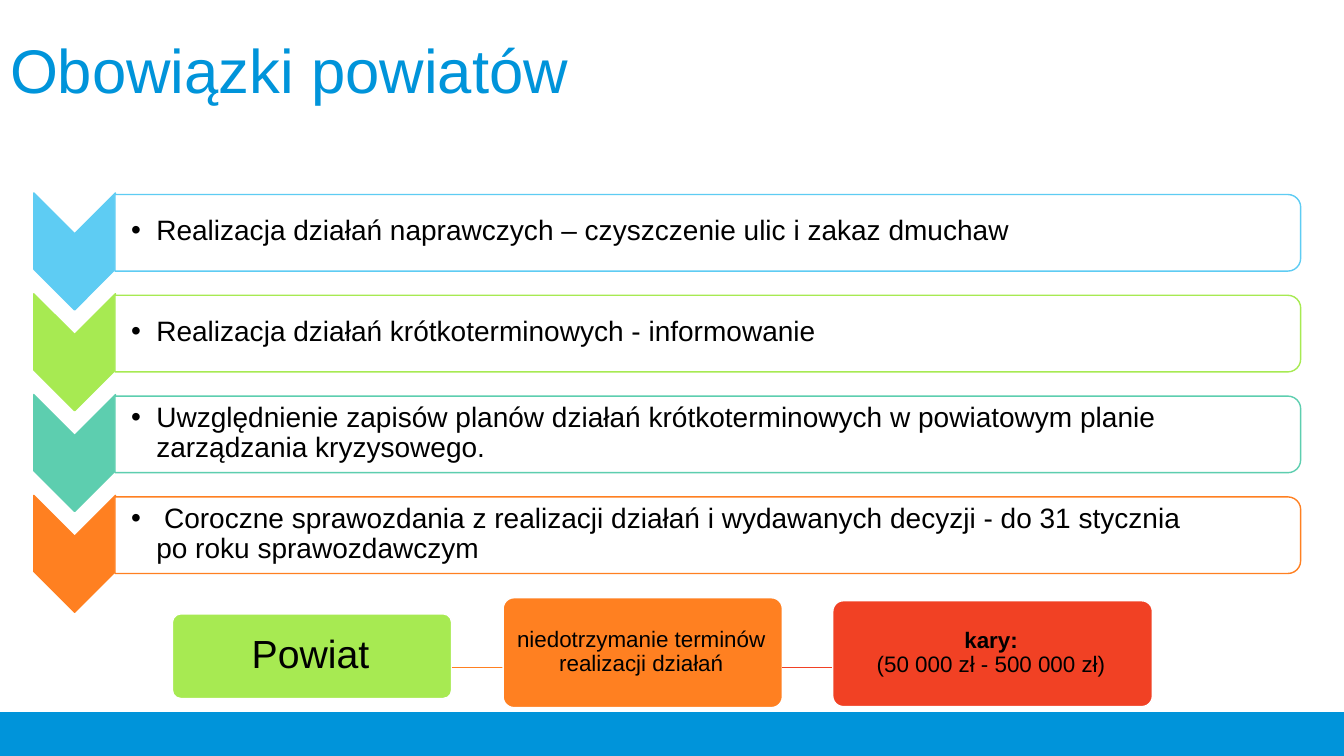
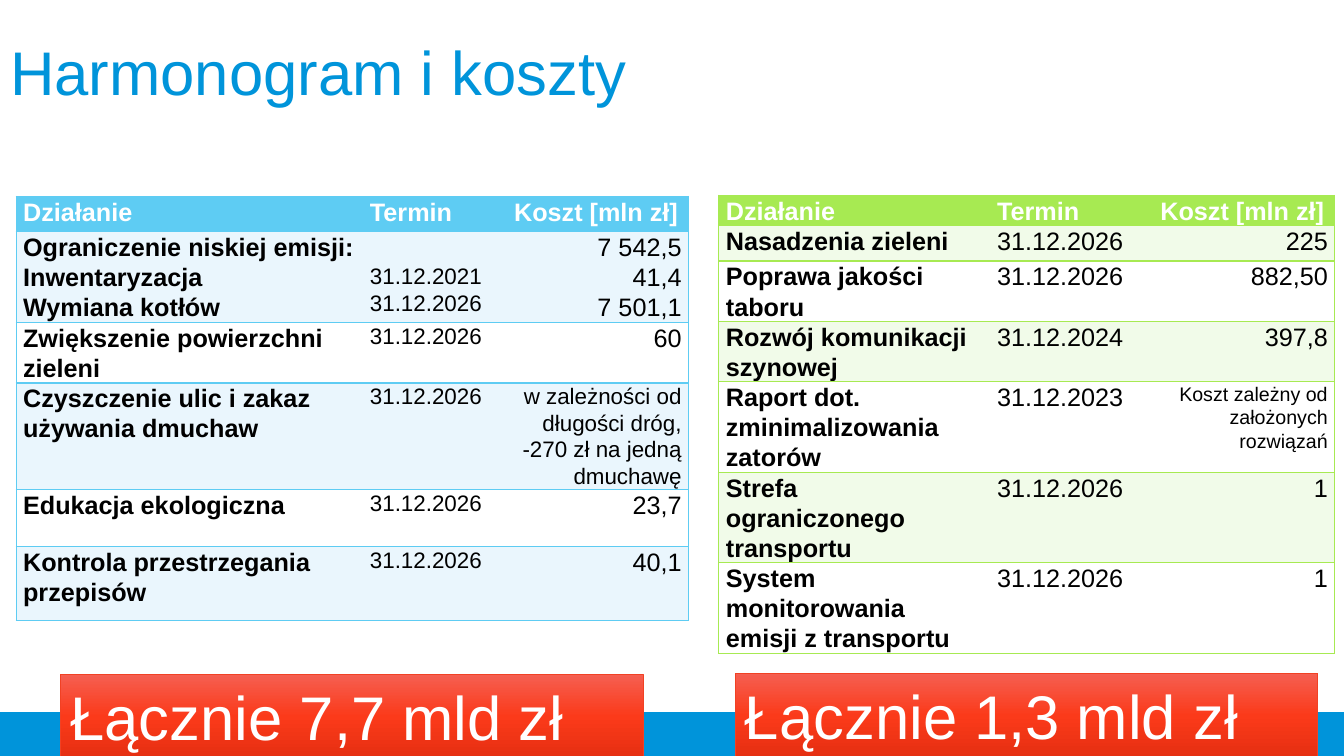
import copy

import pptx
import pptx.dml.color
import pptx.enum.shapes
import pptx.enum.text
import pptx.oxml.ns
import pptx.oxml.xmlchemy
import pptx.util
from lxml import etree

Inches = pptx.util.Inches
Pt = pptx.util.Pt
qn = pptx.oxml.ns.qn
SHAPE = pptx.enum.shapes.MSO_SHAPE
ALIGN = pptx.enum.text.PP_ALIGN
ANCHOR = pptx.enum.text.MSO_ANCHOR

FONT = "Arial"
BLUE, SKY, LIME, TEAL = "0094DA", "5ECCF3", "A7EA52", "5DCEAF"
ORANGE, RED, WHITE, BLACK = "FF8021", "F14124", "FFFFFF", "000000"
TOTAL_GRADIENT = [(0, "F55F51"), (0.5, "FB3A1A"), (1, "E52F11")]

DUTIES = [
    (SKY, "Realizacja działań naprawczych – czyszczenie ulic i zakaz dmuchaw"),
    (LIME, "Realizacja działań krótkoterminowych - informowanie"),
    (TEAL, "Uwzględnienie zapisów planów działań krótkoterminowych w powiatowym "
           "planie zarządzania kryzysowego."),
    (ORANGE, " Coroczne sprawozdania z realizacji działań i wydawanych decyzji "
             "- do 31 stycznia \npo roku sprawozdawczym"),
]

# left, top, width, height (inside the chain), colour, text, size
PENALTY_STEPS = [
    (0, 0.16, 2.77, 0.84, LIME, "Powiat", 28),
    (3.28, 0, 2.77, 1.09, ORANGE, "niedotrzymanie terminów realizacji działań", 16),
    (6.55, 0.03, 3.17, 1.05, RED, "kary:\n(50 000 zł - 500 000 zł)", 16),
]

HEADINGS = ("Działanie", "Termin", "Koszt [mln zł]")
CITY_ROWS = [
    ("Ograniczenie niskiej emisji:\nInwentaryzacja\nWymiana kotłów",
     "31.12.2021\n31.12.2026", "7 542,5\n41,4\n7 501,1"),
    ("Zwiększenie powierzchni zieleni", "31.12.2026", "60"),
    ("Czyszczenie ulic i zakaz używania dmuchaw", "31.12.2026",
     "w zależności od długości dróg,\n-270 zł na jedną dmuchawę"),
    ("Edukacja ekologiczna", "31.12.2026", "23,7"),
    ("Kontrola przestrzegania przepisów", "31.12.2026", "40,1"),
]
TRANSPORT_ROWS = [
    ("Nasadzenia zieleni", "31.12.2026", "225"),
    ("Poprawa jakości taboru", "31.12.2026", "882,50"),
    ("Rozwój komunikacji szynowej", "31.12.2024", "397,8"),
    ("Raport dot. zminimalizowania zatorów", "31.12.2023",
     "Koszt zależny od założonych rozwiązań"),
    ("Strefa ograniczonego transportu", "31.12.2026", "1"),
    ("System monitorowania emisji z transportu", "31.12.2026", "1"),
]


def rgb(color):
    return pptx.dml.color.RGBColor.from_string(color)


def box(left, top, width, height):
    return [Inches(round(length, 2)) for length in (left, top, width, height)]


def style(paragraph, size, color=BLACK, bold=False, align=ALIGN.LEFT, spacing=0.9):
    paragraph.alignment = align
    paragraph.line_spacing = spacing
    for run in paragraph.runs:
        run.font.name = FONT
        run.font.size = Pt(size)
        run.font.bold = bold
        run.font.color.rgb = rgb(color)


def set_margins(target, left, top, right, bottom):
    target.margin_left, target.margin_top = Inches(left), Inches(top)
    target.margin_right, target.margin_bottom = Inches(right), Inches(bottom)


def add_shape(slide, kind, bounds, fill, line, line_width=1):
    shape = slide.shapes.add_shape(kind, *box(*bounds))
    shape.shadow.inherit = False
    if fill:
        shape.fill.solid()
        shape.fill.fore_color.rgb = rgb(fill)
    shape.line.color.rgb = rgb(line)
    shape.line.width = Pt(line_width)
    return shape


def add_turned_shape(slide, kind, bounds, fill, line):
    """Add a shape turned a quarter right that covers the given bounds."""
    left, top, width, height = bounds
    unturned = (left + (width - height) / 2, top + (height - width) / 2, height, width)
    shape = add_shape(slide, kind, unturned, fill, line)
    shape.rotation = 90


def add_band_to_layout(prs, layout):
    """Draw the bottom band once, at the back of the shared layout."""
    slide = prs.slides[0]
    band = add_shape(slide, SHAPE.RECTANGLE, (0, 7.07, 13.33, 0.43), BLUE, BLUE)
    band.element.nvSpPr.cNvPr.id = 100
    layout.shapes.element.insert(2, band.element)


def add_title(slide, text, bounds):
    title = slide.shapes.title
    title.left, title.top, title.width, title.height = box(*bounds)
    frame = title.text_frame
    frame.text = text
    frame.word_wrap = True
    frame.auto_size = pptx.enum.text.MSO_AUTO_SIZE.NONE
    frame.vertical_anchor = ANCHOR.MIDDLE
    style(frame.paragraphs[0], 44, BLUE)


def add_duty(slide, left, top, width, color, text):
    arrow_width, panel_height = 0.81, 0.76
    panel_left, panel_width = left + arrow_width, width - arrow_width
    add_turned_shape(slide, SHAPE.CHEVRON, (left, top, arrow_width, 1.16), color, color)
    add_turned_shape(slide, SHAPE.ROUND_2_SAME_RECTANGLE,
                     (panel_left, top + 0.01, panel_width, panel_height), WHITE, color)
    duty = slide.shapes.add_textbox(
        *box(panel_left, top + 0.04, panel_width - 0.04, panel_height - 0.08))
    frame = duty.text_frame
    frame.word_wrap = True
    frame.vertical_anchor = ANCHOR.MIDDLE
    set_margins(frame, 0.16, 0.01, 0.01, 0.01)
    paragraph = frame.paragraphs[0]
    paragraph.text = text
    properties = paragraph._p.get_or_add_pPr()
    properties.set("marL", str(Inches(0.25)))
    properties.set("indent", str(-Inches(0.25)))
    etree.SubElement(properties, qn("a:buFont")).set("typeface", FONT)
    etree.SubElement(properties, qn("a:buChar")).set("char", "•")
    style(paragraph, 20)


def add_duty_list(slide, left, top, width, pitch):
    for index, (color, text) in enumerate(DUTIES):
        add_duty(slide, left, top + index * pitch, width, color, text)


def add_penalty_chain(slide, left, top):
    link_y = top + 0.69
    previous_right = None
    for dx, dy, width, height, color, text, size in PENALTY_STEPS:
        step_left = left + dx
        if previous_right is not None:
            link = slide.shapes.add_connector(
                pptx.enum.shapes.MSO_CONNECTOR.STRAIGHT,
                Inches(previous_right), Inches(link_y), Inches(step_left), Inches(link_y))
            link.line.color.rgb = rgb(color)
            link.line.width = Pt(1)
            etree.SubElement(link._element.spPr, qn("a:effectLst"))
        step = add_shape(slide, SHAPE.ROUNDED_RECTANGLE,
                         (step_left, top + dy, width, height), color, WHITE)
        step.adjustments[0] = 0.1
        frame = step.text_frame
        frame.word_wrap = True
        frame.vertical_anchor = ANCHOR.MIDDLE
        set_margins(frame, 0.02, 0.02, 0.05, 0.02)
        paragraph = frame.paragraphs[0]
        paragraph.text = text
        style(paragraph, size, align=ALIGN.CENTER)
        if len(paragraph.runs) > 1:
            paragraph.runs[0].font.bold = True
        previous_right = step_left + width


def set_borders(cell, sides, color):
    """Draw the named sides (out of L, R, T, B) and clear the others."""
    properties = cell._tc.get_or_add_tcPr()
    for side in "LRTB":
        line = etree.SubElement(properties, qn(f"a:ln{side}"))
        line.set("w", str(Pt(1)))
        if side in sides:
            fill = etree.SubElement(line, qn("a:solidFill"))
            etree.SubElement(fill, qn("a:srgbClr")).set("val", color)
        else:
            etree.SubElement(line, qn("a:noFill"))


def add_cost_table(slide, left, top, widths, heights, rows, color, tint, date_size, note_size):
    grid = [HEADINGS] + rows
    table = slide.shapes.add_table(
        len(grid), len(HEADINGS), *box(left, top, sum(widths), sum(heights))).table
    table.horz_banding = False
    for column, width in zip(table.columns, widths):
        column.width = Inches(width)
    for row, height in zip(table.rows, heights):
        row.height = Inches(height)
    for r, texts in enumerate(grid):
        for c, text in enumerate(texts):
            cell = table.cell(r, c)
            set_borders(cell, ("LTB", "TB", "RTB")[c], color)
            cell.fill.solid()
            cell.fill.fore_color.rgb = rgb(color if r == 0 else tint if r % 2 else WHITE)
            set_margins(cell, 0.07, 0, 0.07, 0)
            cell.text_frame.text = text
            is_note = c == 2 and any(word.isalpha() for word in text.split())
            size = 18
            if r and c == 1:
                size = date_size
            elif r and is_note:
                size = note_size
            for paragraph in cell.text_frame.paragraphs:
                style(paragraph, size, BLACK if r else WHITE, bold=r == 0 or c == 0,
                      align=ALIGN.RIGHT if r and c == 2 else ALIGN.LEFT, spacing=1.07)
    return table


def add_total(slide, left, top, text):
    total = add_shape(slide, SHAPE.RECTANGLE, (left, top, 5.78, 0.84), None, RED, 0.5)
    total.fill.gradient()
    total.fill.gradient_angle = 270
    stop_list = total._element.spPr.find(qn("a:gradFill")).find(qn("a:gsLst"))
    stop_list.append(copy.deepcopy(stop_list[0]))
    for stop, (position, color) in zip(total.fill.gradient_stops, TOTAL_GRADIENT):
        stop.position = position
        stop.color.rgb = rgb(color)
    frame = total.text_frame
    frame.word_wrap = True
    frame.vertical_anchor = ANCHOR.TOP
    frame.text = text
    style(frame.paragraphs[0], 44, WHITE, spacing=1.0)


def build_duties_slide(slide):
    add_title(slide, "Obowiązki powiatów", (0, 0, 10.23, 1.45))
    add_duty_list(slide, 0.33, 1.92, 12.57, 1)
    add_penalty_chain(slide, 1.71, 5.93)


def build_costs_slide(slide):
    add_title(slide, "Harmonogram i koszty", (0, 0.33, 10.02, 0.84))
    add_cost_table(slide, 7.13, 1.94, (2.69, 1.62, 1.8),
                   (0.28, 0.35, 0.58, 0.58, 0.88, 0.88, 0.87),
                   TRANSPORT_ROWS, LIME, "F1FBE9", 18, 14)
    city = add_cost_table(slide, 0.16, 1.95, (3.44, 1.43, 1.8),
                          (0.35, 0.9, 0.57, 1, 0.57, 0.73),
                          CITY_ROWS, SKY, "EAF6FD", 16, 16)
    city.cell(1, 1).margin_top = Inches(0.31)
    add_total(slide, 0.6, 6.69, "Łącznie 7,7 mld zł")
    add_total(slide, 7.29, 6.68, "Łącznie 1,3 mld zł")


def main():
    prs = pptx.Presentation()
    prs.slide_width, prs.slide_height = Inches(13.33), Inches(7.5)
    layout = prs.slide_layouts[5]
    duties, costs = [prs.slides.add_slide(layout) for _ in range(2)]
    add_band_to_layout(prs, layout)
    build_duties_slide(duties)
    build_costs_slide(costs)
    prs.save("out.pptx")


if __name__ == "__main__":
    main()
